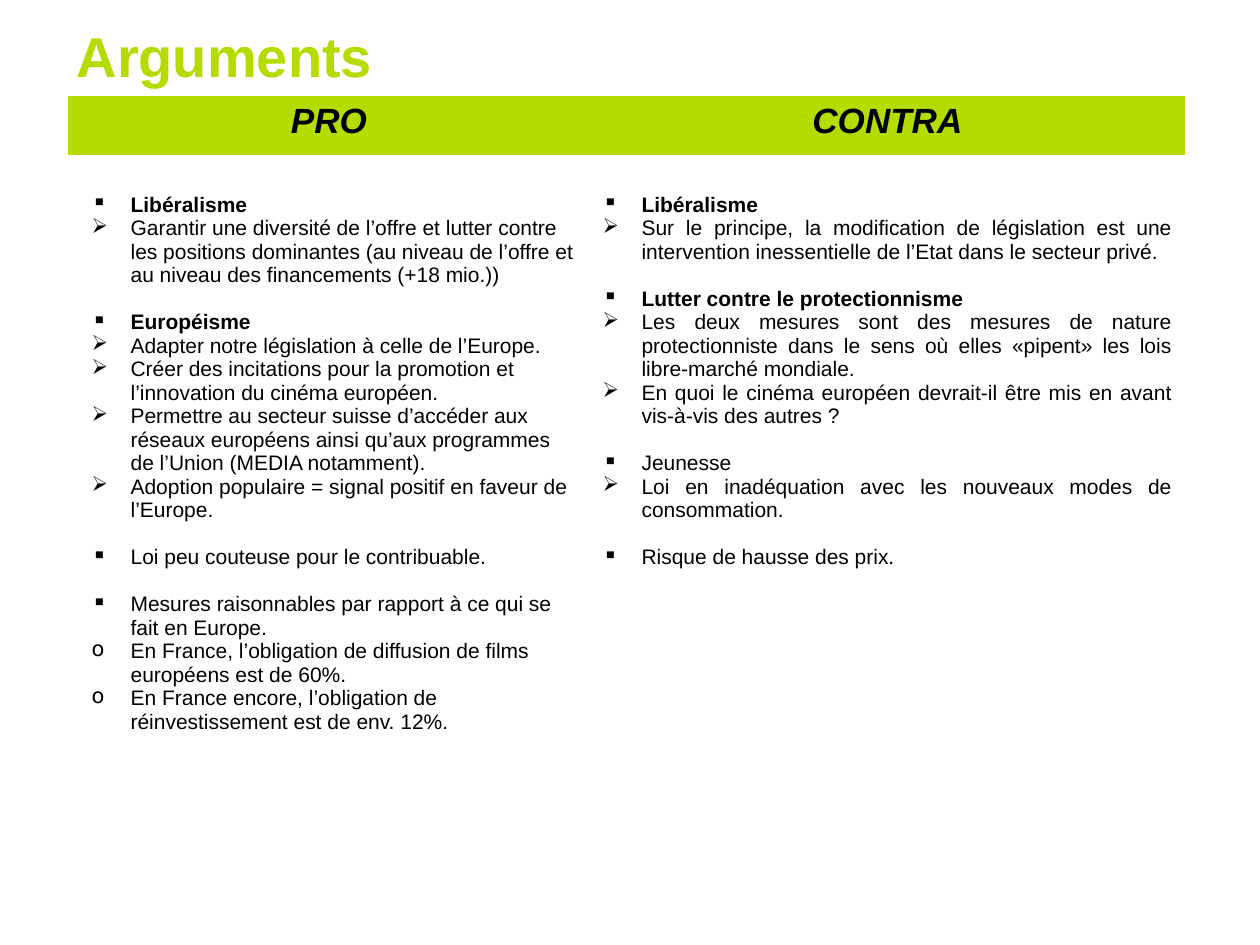
"""Build the Arguments slide comparing the PRO and CONTRA positions."""
from dataclasses import dataclass

from lxml import etree
from pptx import Presentation
from pptx import util as u
from pptx.dml.color import RGBColor
from pptx.enum import text
from pptx.oxml.ns import qn

NO_GRID_STYLE = "{2D5ABB26-0587-4C30-8999-92F81FD0307C}"
SQUARE, ARROW, CIRCLE = "▪", "➢", "o"


@dataclass(frozen=True)
class Theme:
    font: str = "Arial"
    accent: RGBColor = RGBColor(0xB4, 0xDC, 0x00)
    ink: RGBColor = RGBColor(0, 0, 0)
    title_size: int = 32
    header_size: int = 20
    body_size: int = 12
    group_gap: float = 13.4


@dataclass(frozen=True)
class Point:
    bullet: str
    words: str
    bold: bool = False


@dataclass(frozen=True)
class Column:
    heading: str
    width: int
    indent: int
    alignment: text.PP_ALIGN
    points: tuple[Point, ...]


THEME = Theme()
HANGING = 39
HEADER_HEIGHT, BODY_HEIGHT = 59, 649

COLUMNS = (
    Column("PRO", 522, 50, text.PP_ALIGN.LEFT, (
        Point(SQUARE, "Libéralisme", True),
        Point(ARROW, "Garantir une diversité de l’offre et lutter contre les positions dominantes "
                     "(au niveau de l’offre et au niveau des financements (+18 mio.))"),
        Point(SQUARE, "Européisme", True),
        Point(ARROW, "Adapter notre législation à celle de l’Europe."),
        Point(ARROW, "Créer des incitations pour la promotion et l’innovation du cinéma européen."),
        Point(ARROW, "Permettre au secteur suisse d’accéder aux réseaux européens ainsi "
                     "qu’aux programmes de l’Union (MEDIA notamment)."),
        Point(ARROW, "Adoption populaire = signal positif en faveur de l’Europe."),
        Point(SQUARE, "Loi peu couteuse pour le contribuable."),
        Point(SQUARE, "Mesures raisonnables par rapport à ce qui se fait en Europe."),
        Point(CIRCLE, "En France, l’obligation de diffusion de films européens est de 60%."),
        Point(CIRCLE, "En France encore, l’obligation de réinvestissement est de env. 12%."),
    )),
    Column("CONTRA", 595, 39, text.PP_ALIGN.JUSTIFY, (
        Point(SQUARE, "Libéralisme", True),
        Point(ARROW, "Sur le principe, la modification de législation est une intervention "
                     "inessentielle de l’Etat dans le secteur privé."),
        Point(SQUARE, "Lutter contre le protectionnisme", True),
        Point(ARROW, "Les deux mesures sont des mesures de nature protectionniste dans le sens "
                     "où elles «pipent» les lois libre-marché mondiale."),
        Point(ARROW, "En quoi le cinéma européen devrait-il être mis en avant vis-à-vis des autres ?"),
        Point(SQUARE, "Jeunesse"),
        Point(ARROW, "Loi en inadéquation avec les nouveaux modes de consommation."),
        Point(SQUARE, "Risque de hausse des prix."),
    )),
)


def px(length: int) -> u.Emu:
    """Turn a length in px into EMU."""
    return u.Emu(round(length * 914400 / 126))


def set_font(paragraph, size: int, color: RGBColor, bold: bool = False, italic: bool = False) -> None:
    """Format a whole paragraph in the theme font."""
    font = paragraph.font
    font.name, font.size, font.bold, font.italic = THEME.font, u.Pt(size), bold, italic
    font.color.rgb = color


def add_bullet(paragraph, character: str, indent: int) -> None:
    """Give a paragraph a hanging bullet in the text colour."""
    properties = paragraph._p.get_or_add_pPr()
    properties.set("marL", str(px(indent)))
    properties.set("indent", str(-px(HANGING)))
    color = etree.SubElement(properties, qn("a:buClr"))
    etree.SubElement(color, qn("a:srgbClr"), val=str(THEME.ink))
    etree.SubElement(properties, qn("a:buChar"), char=character)


def add_title(slide, words: str) -> None:
    """Place and format the title placeholder."""
    title = slide.shapes.title
    title.left, title.top, title.width, title.height = px(64), px(13), px(562), px(84)
    frame = title.text_frame
    frame.text = words
    frame.auto_size = text.MSO_AUTO_SIZE.NONE
    frame.vertical_anchor = text.MSO_ANCHOR.MIDDLE
    paragraph = frame.paragraphs[0]
    paragraph.alignment = text.PP_ALIGN.LEFT
    set_font(paragraph, THEME.title_size, THEME.accent, bold=True)


def fill_header(cell, heading: str) -> None:
    """Write a column heading on the accent colour."""
    cell.fill.solid()
    cell.fill.fore_color.rgb = THEME.accent
    cell.text = heading
    paragraph = cell.text_frame.paragraphs[0]
    paragraph.alignment = text.PP_ALIGN.CENTER
    set_font(paragraph, THEME.header_size, THEME.ink, bold=True, italic=True)


def fill_points(cell, column: Column) -> None:
    """Write the points of a column, with a gap before each new group."""
    cell.fill.background()
    cell.margin_top = px(38)
    frame = cell.text_frame
    for index, point in enumerate(column.points):
        paragraph = frame.add_paragraph() if index else frame.paragraphs[0]
        paragraph.text = point.words
        add_bullet(paragraph, point.bullet, column.indent)
        paragraph.alignment = column.alignment
        if index and point.bullet == SQUARE:
            paragraph.space_before = u.Pt(THEME.group_gap)
        set_font(paragraph, THEME.body_size, THEME.ink, bold=point.bold)


def add_arguments(slide, columns: tuple[Column, ...]) -> None:
    """Draw the table of arguments, one column per position."""
    width = sum(column.width for column in columns)
    frame = slide.shapes.add_table(2, len(columns), px(68), px(96), px(width),
                                   px(HEADER_HEIGHT + BODY_HEIGHT))
    table = frame.table
    table.first_row = table.horz_banding = False
    table._tbl.tblPr.find(qn("a:tableStyleId")).text = NO_GRID_STYLE
    table.rows[0].height, table.rows[1].height = px(HEADER_HEIGHT), px(BODY_HEIGHT)
    for index, column in enumerate(columns):
        table.columns[index].width = px(column.width)
        fill_header(table.cell(0, index), column.heading)
        fill_points(table.cell(1, index), column)


def main() -> None:
    """Build and save the presentation."""
    presentation = Presentation()
    presentation.slide_width, presentation.slide_height = u.Inches(10), u.Inches(7.5)
    slide = presentation.slides.add_slide(presentation.slide_layouts[5])
    add_title(slide, "Arguments")
    add_arguments(slide, COLUMNS)
    presentation.save("out.pptx")


if __name__ == "__main__":
    main()
